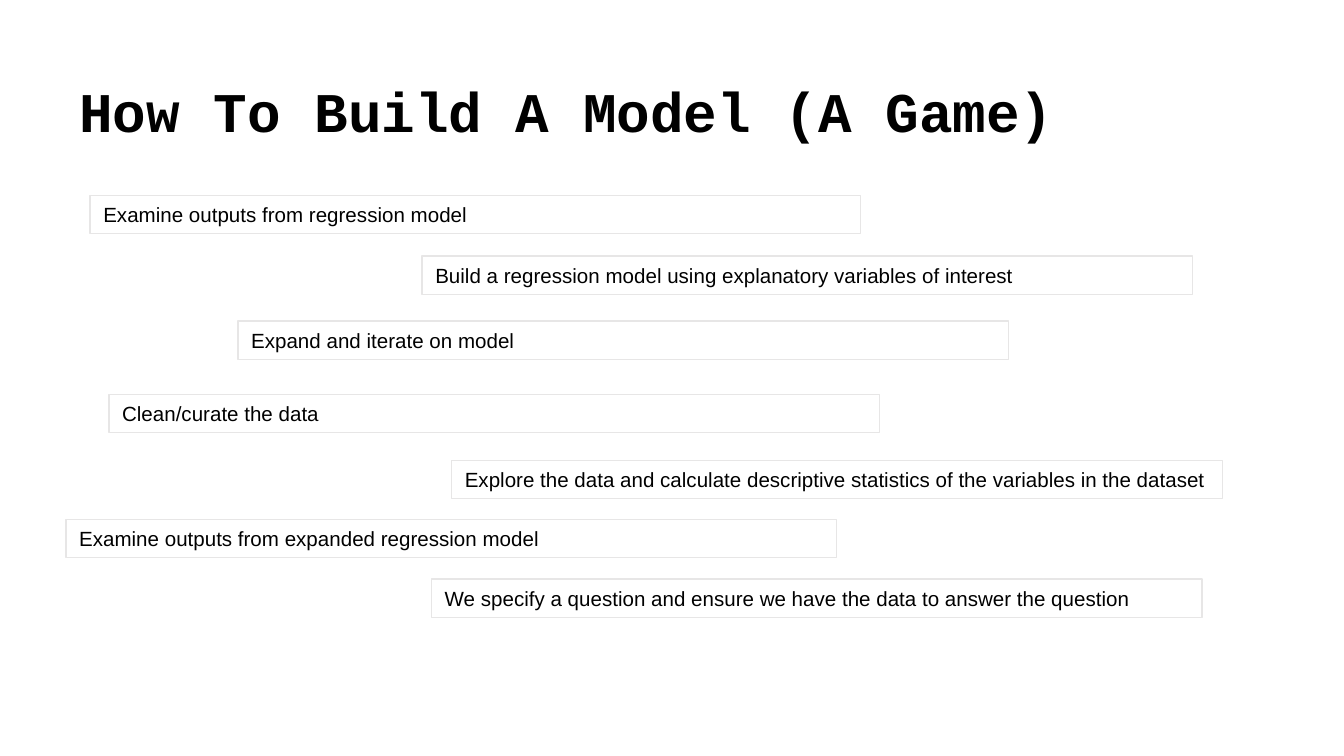
import pptx
import pptx.util
import pptx.dml.color
import pptx.enum.shapes
import pptx.enum.text

# Content: left, top and wording of each step card
TITLE = "How To Build A Model (A Game)"
STEPS = [
    (134, 291, "Examine outputs from regression model"),
    (628, 381, "Build a regression model using explanatory variables of interest"),
    (354, 478, "Expand and iterate on model"),
    (162, 587, "Clean/curate the data"),
    (672, 685, "Explore the data and calculate descriptive statistics of the variables in the dataset"),
    (98, 773, "Examine outputs from expanded regression model"),
    (642, 862, "We specify a question and ensure we have the data to answer the question"),
]

# Layout in px, 200 to the inch
SCALE = 914400 // 200
WIDE, HIGH = 2000, 1125
HEAD = (98, 6, 1792, 218)
CARD = (1147, 57)


def px(num):
    return pptx.util.Emu(num * SCALE)


def color(code):
    return pptx.dml.color.RGBColor.from_string(code)


HEAD_FONT = {"name": "Courier New", "size": pptx.util.Pt(30), "bold": True}
CARD_FONT = {"name": "Arial", "size": pptx.util.Pt(11), "bold": False}


def write(frame, text, form, anchor):
    frame.text = text
    frame.word_wrap = True
    frame.vertical_anchor = anchor
    para = frame.paragraphs[0]
    para.alignment = pptx.enum.text.PP_ALIGN.LEFT
    for key, val in form.items():
        setattr(para.font, key, val)
    para.font.color.rgb = color("000000")


def add_card(slide, left, top, text):
    card = slide.shapes.add_shape(
        pptx.enum.shapes.MSO_SHAPE.RECTANGLE, *map(px, (left, top, *CARD)))
    card.shadow.inherit = False
    card.fill.background()
    card.line.color.rgb = color("E7E6E6")
    card.line.width = pptx.util.Pt(0.75)
    write(card.text_frame, text, CARD_FONT, pptx.enum.text.MSO_ANCHOR.TOP)
    card.text_frame.auto_size = pptx.enum.text.MSO_AUTO_SIZE.SHAPE_TO_FIT_TEXT


def main():
    deck = pptx.Presentation()
    deck.slide_width, deck.slide_height = px(WIDE), px(HIGH)
    slide = deck.slides.add_slide(deck.slide_layouts[5])

    # Title
    title = slide.shapes.title
    title.left, title.top, title.width, title.height = map(px, HEAD)
    write(title.text_frame, TITLE, HEAD_FONT, pptx.enum.text.MSO_ANCHOR.BOTTOM)
    title.text_frame.auto_size = pptx.enum.text.MSO_AUTO_SIZE.NONE

    # Step cards
    for left, top, text in STEPS:
        add_card(slide, left, top, text)

    deck.save("out.pptx")


if __name__ == "__main__":
    main()
